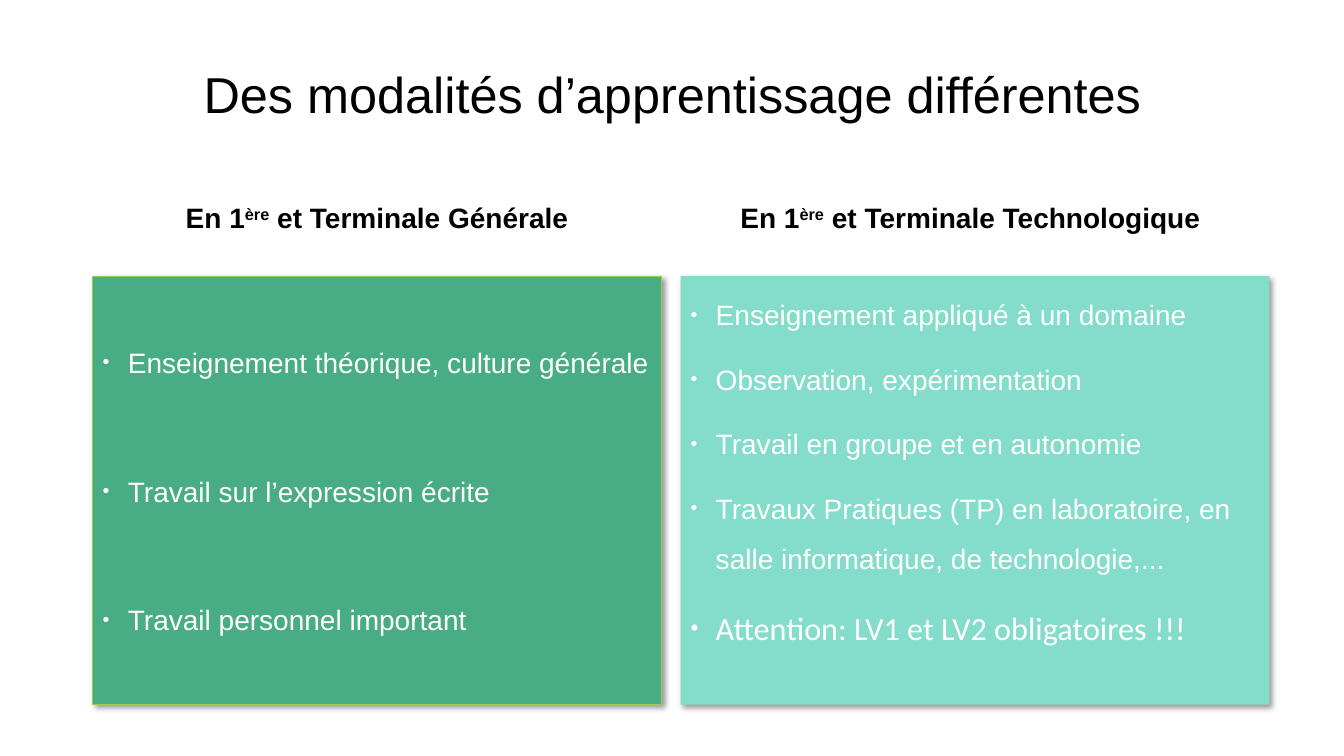
from dataclasses import dataclass

from lxml.etree import SubElement
from pptx import Presentation
from pptx.dml.color import RGBColor
from pptx.enum.shapes import MSO_SHAPE
from pptx.enum.text import MSO_ANCHOR, PP_ALIGN
from pptx.oxml.ns import qn
from pptx.util import Inches, Pt

BLACK = RGBColor(0x00, 0x00, 0x00)
WHITE = RGBColor(0xFF, 0xFF, 0xFF)
GREEN = RGBColor(0x48, 0xAC, 0x84)
LIME = RGBColor(0x92, 0xD0, 0x50)
TURQUOISE = RGBColor(0x83, 0xDD, 0xCA)

# Grid: 100 columns by 100 rows
WIDTH, HEIGHT = Inches(13.33), Inches(7.5)
TITLE_ROW, TITLE_ROWS = 3.2, 19.33
HEADING_ROW, HEADING_ROWS = 19.73, 12
PANEL_ROW, PANEL_ROWS = 36.53, 56.67
MARGIN, TITLE_COLS = 6.9, 86.27


@dataclass
class Item:
    text: str
    size: float = 20
    font: str = "Arial"


@dataclass
class Track:
    heading: str
    heading_col: float
    heading_cols: float
    panel_col: float
    panel_cols: float
    fill: RGBColor
    line: RGBColor | None
    top_inset: float
    gap: float
    items: list[Item]


TRACKS = [
    Track("Générale", MARGIN, 42.31, MARGIN, 42.31, GREEN, LIME, 0.52, 56, [
        Item("Enseignement théorique, culture générale"),
        Item("Travail sur l’expression écrite"),
        Item("Travail personnel important"),
    ]),
    Track("Technologique", 50.94, 42.53, 50.64, 43.81, TURQUOISE, None, 0.05, 10, [
        Item("Enseignement appliqué à un domaine"),
        Item("Observation, expérimentation"),
        Item("Travail en groupe et en autonomie"),
        Item("Travaux Pratiques (TP) en laboratoire, en salle informatique, "
             "de technologie,..."),
        Item("Attention: LV1 et LV2 obligatoires !!!", 23, "Calibri"),
    ]),
]


def grid(col: float, row: float, cols: float, rows: float) -> tuple[int, ...]:
    return (int(WIDTH * col / 100), int(HEIGHT * row / 100),
            int(WIDTH * cols / 100), int(HEIGHT * rows / 100))


def add_text(p, text: str, *, size: float = 20, font: str = "Arial",
             color: RGBColor = BLACK, bold: bool = False, raised: bool = False) -> None:
    r = p.add_run()
    r.text = text
    r.font.size, r.font.name, r.font.bold = Pt(size), font, bold
    r.font.color.rgb = color
    if raised:
        r.font._element.set("baseline", "30000")


def add_bullet(p) -> None:
    pPr = p._p.get_or_add_pPr()
    pPr.set("marL", str(Inches(0.25)))
    pPr.set("indent", str(-Inches(0.25)))
    SubElement(pPr, qn("a:buSzPct"), val="70000")
    SubElement(pPr, qn("a:buFont"), typeface="Arial")
    SubElement(pPr, qn("a:buChar"), char="•")


def add_shadow(sp) -> None:
    sp.shadow.inherit = False
    effects = sp._element.spPr.find(qn("a:effectLst"))
    shadow = SubElement(effects, qn("a:outerShdw"), blurRad=str(Pt(4)),
                        dist=str(Pt(3)), dir="2700000", algn="tl", rotWithShape="0")
    color = SubElement(shadow, qn("a:srgbClr"), val=str(BLACK))
    SubElement(color, qn("a:alpha"), val="40000")


def add_title(slide, text: str) -> None:
    sp = slide.shapes.title
    sp.left, sp.top, sp.width, sp.height = grid(MARGIN, TITLE_ROW, TITLE_COLS, TITLE_ROWS)
    tf = sp.text_frame
    tf.vertical_anchor = MSO_ANCHOR.MIDDLE
    p = tf.paragraphs[0]
    p.alignment, p.line_spacing = PP_ALIGN.CENTER, 0.9
    add_text(p, text, size=36)


def add_heading(slide, track: Track) -> None:
    sp = slide.shapes.add_textbox(
        *grid(track.heading_col, HEADING_ROW, track.heading_cols, HEADING_ROWS))
    tf = sp.text_frame
    tf.word_wrap, tf.vertical_anchor = True, MSO_ANCHOR.BOTTOM
    p = tf.paragraphs[0]
    p.alignment, p.line_spacing, p.space_before = PP_ALIGN.CENTER, 0.9, Pt(10)
    add_text(p, "En 1", bold=True)
    add_text(p, "ère", bold=True, raised=True)
    add_text(p, f" et Terminale {track.heading}", bold=True)


def add_panel(slide, track: Track) -> None:
    sp = slide.shapes.add_shape(
        MSO_SHAPE.RECTANGLE,
        *grid(track.panel_col, PANEL_ROW, track.panel_cols, PANEL_ROWS))
    sp.fill.solid()
    sp.fill.fore_color.rgb = track.fill
    if track.line is None:
        sp.line.fill.background()
    else:
        sp.line.color.rgb, sp.line.width = track.line, Pt(0.75)
    add_shadow(sp)
    tf = sp.text_frame
    tf.word_wrap, tf.vertical_anchor = True, MSO_ANCHOR.TOP
    tf.margin_top = Inches(track.top_inset)
    for i, item in enumerate(track.items):
        p = tf.add_paragraph() if i else tf.paragraphs[0]
        p.alignment, p.line_spacing = PP_ALIGN.LEFT, 1.5
        p.space_before = Pt(track.gap if i else 10)
        add_bullet(p)
        add_text(p, item.text, size=item.size, font=item.font, color=WHITE)


def main() -> None:
    prs = Presentation()
    prs.slide_width, prs.slide_height = WIDTH, HEIGHT
    slide = prs.slides.add_slide(prs.slide_layouts[5])

    add_title(slide, "Des modalités d’apprentissage différentes")
    # One heading and one panel per track
    for track in TRACKS:
        add_heading(slide, track)
        add_panel(slide, track)

    prs.save("out.pptx")


if __name__ == "__main__":
    main()
